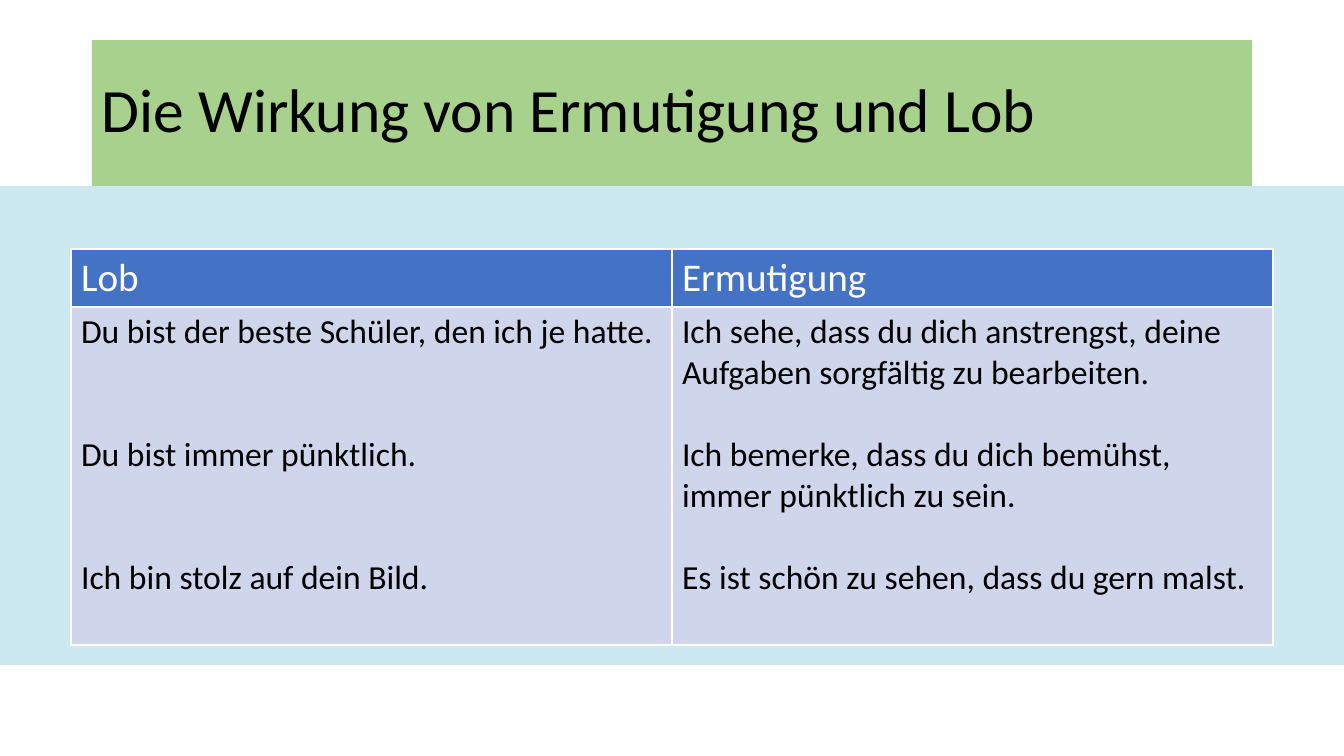
from lxml import etree
from pptx import Presentation
from pptx import util as u
from pptx.dml.color import RGBColor
from pptx.enum import shapes, text
from pptx.oxml import ns

PX = 914400 / 100.8
WHITE = RGBColor(0xFF, 0xFF, 0xFF)
BLACK = RGBColor(0, 0, 0)
BAND = RGBColor(0xCC, 0xE9, 0xF2)
GREEN = RGBColor(0xA9, 0xD1, 0x8E)
BLUE = RGBColor(0x44, 0x72, 0xC4)
PALE = RGBColor(0xCF, 0xD5, 0xEA)


def add_rect(left, top, width, height, color):
    sp = s.shapes.add_shape(shapes.MSO_SHAPE.RECTANGLE,
                            *[round(v * PX) for v in (left, top, width, height)])
    sp.shadow.inherit = False
    sp.fill.solid()
    sp.fill.fore_color.rgb = color
    sp.line.fill.background()
    return sp


def style_font(p, size, color):
    p.font.name = "Calibri"
    p.font.size = u.Pt(size)
    p.font.bold = False
    p.font.color.rgb = color


prs = Presentation()
prs.slide_width = round(1344 * PX)
prs.slide_height = round(756 * PX)
s = prs.slides.add_slide(prs.slide_layouts[6])

add_rect(0, 186, 1344, 479, BAND)

columns = [
    ("Lob", 58.6, [
        "Du bist der beste Schüler, den ich je hatte.",
        "Du bist immer pünktlich.",
        "Ich bin stolz auf dein Bild.",
    ]),
    ("Ermutigung", 29.3, [
        "Ich sehe, dass du dich anstrengst, deine Aufgaben sorgfältig zu bearbeiten.",
        "Ich bemerke, dass du dich bemühst, immer pünktlich zu sein.",
        "Es ist schön zu sehen, dass du gern malst.",
    ]),
]
table = s.shapes.add_table(2, 2, *[round(v * PX) for v in (71, 249, 1202, 396)]).table
for row, height in zip(table.rows, (58, 338)):
    row.height = round(height * PX)

for col, (heading, gap, examples) in enumerate(columns):
    table.columns[col].width = round(601 * PX)
    rows = [([heading], 28, WHITE, BLUE), (examples, 24, BLACK, PALE)]
    for row, (lines, size, color, fill) in enumerate(rows):
        cell = table.cell(row, col)
        tf = cell.text_frame
        for i, line in enumerate(lines):
            p = tf.add_paragraph() if i else tf.paragraphs[0]
            p.text = line
            style_font(p, size, color)
            if i:
                p.space_before = u.Pt(gap)
        tcPr = cell._tc.get_or_add_tcPr()
        for side in ("a:lnL", "a:lnR", "a:lnT", "a:lnB"):
            ln = etree.SubElement(tcPr, ns.qn(side), w=str(u.Pt(1)))
            solid = etree.SubElement(ln, ns.qn("a:solidFill"))
            etree.SubElement(solid, ns.qn("a:srgbClr"), val=str(WHITE))
        cell.fill.solid()
        cell.fill.fore_color.rgb = fill

title = add_rect(92, 40, 1160, 146, GREEN)
tf = title.text_frame
tf.word_wrap = True
tf.vertical_anchor = text.MSO_ANCHOR.MIDDLE
p = tf.paragraphs[0]
p.text = "Die Wirkung von Ermutigung und Lob"
p.alignment = text.PP_ALIGN.LEFT
p.line_spacing = 0.9
style_font(p, 44, BLACK)

prs.save("out.pptx")
